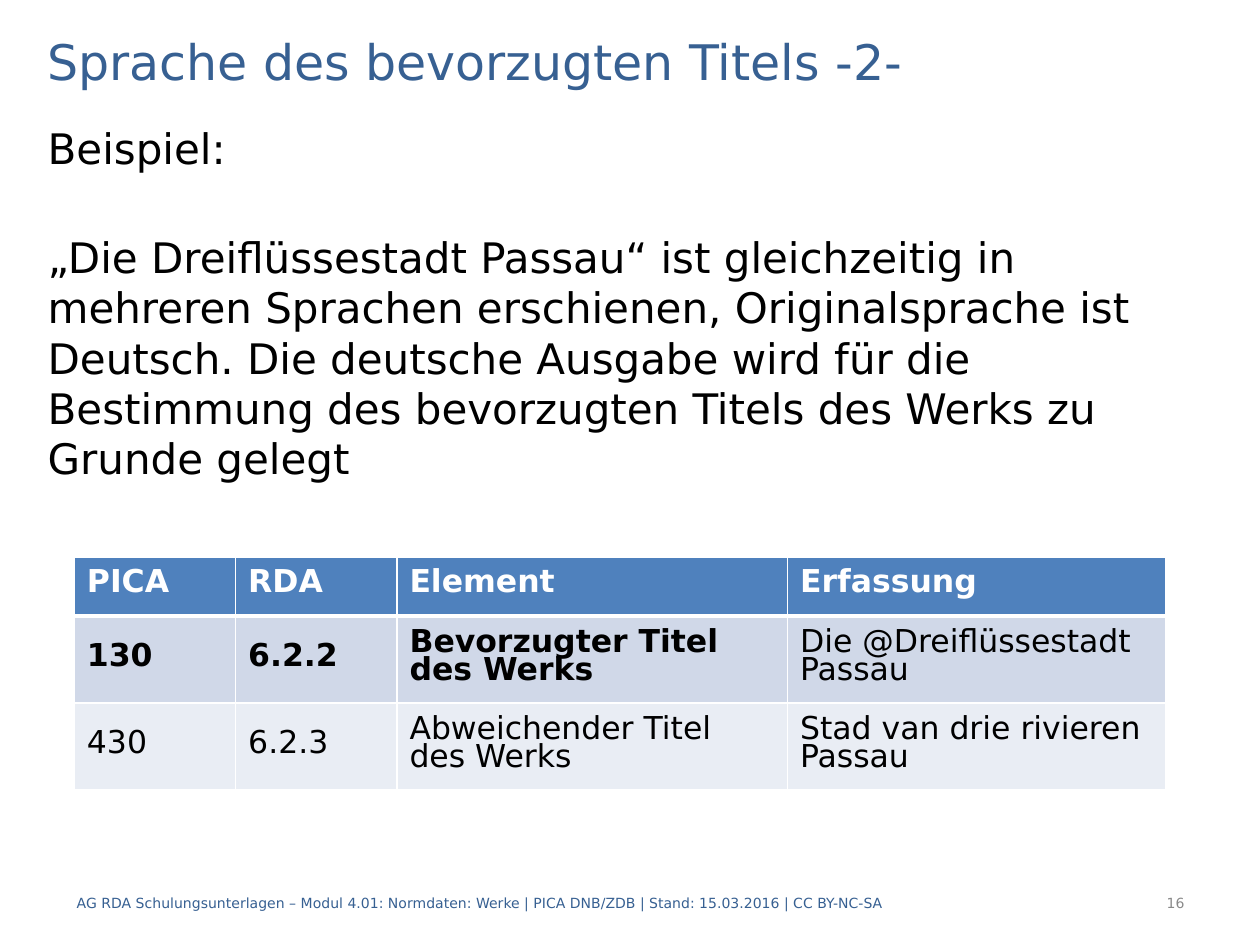
from lxml.etree import SubElement
from pptx import Presentation
from pptx.dml.color import RGBColor
from pptx.enum.text import MSO_ANCHOR, PP_ALIGN
from pptx.oxml.ns import qn
from pptx.util import Inches, Pt

FONT = "DejaVu Sans"
BLUE, GREY, BLACK, WHITE = "376092", "898989", "000000", "FFFFFF"
ROW_FILLS = ["4F81BD", "D0D8E8", "E9EDF4"]
COL_WIDTHS = [1.28, 1.28, 3.1, 3.0]
ROW_HEIGHTS = [0.47, 0.69, 0.69]
ROWS = [
    ["PICA", "RDA", "Element", "Erfassung"],
    ["130", "6.2.2", "Bevorzugter Titel des Werks", "Die @Dreiflüssestadt Passau"],
    ["430", "6.2.3", "Abweichender Titel des Werks", "Stad van drie rivieren Passau"],
]
BODY = [
    "Beispiel:",
    "„Die Dreiflüssestadt Passau“ ist gleichzeitig in mehreren Sprachen erschienen, "
    "Originalsprache ist Deutsch. Die deutsche Ausgabe wird für die Bestimmung des "
    "bevorzugten Titels des Werks zu Grunde gelegt",
]
FOOTER = ("AG RDA Schulungsunterlagen – Modul 4.01: Normdaten: Werke | PICA DNB/ZDB | "
          "Stand: 15.03.2016 | CC BY-NC-SA")


def rgb(value):
    return RGBColor.from_string(value)


def set_font(p, size, color, bold=False):
    p.font.name = FONT
    p.font.size = Pt(size)
    p.font.bold = bold
    p.font.color.rgb = rgb(color)


def add_text(s, box, paragraphs, size, color, anchor=MSO_ANCHOR.MIDDLE,
             align=PP_ALIGN.LEFT, gap=0, line=None):
    """Add a text box; gap is the space in points between its paragraphs."""
    tf = s.shapes.add_textbox(*map(Inches, box)).text_frame
    tf.word_wrap = True
    tf.vertical_anchor = anchor
    for i, text in enumerate(paragraphs):
        p = tf.paragraphs[0] if i == 0 else tf.add_paragraph()
        p.text = text
        p.alignment = align
        p.space_before = Pt(gap if i else 0)
        if line:
            p.line_spacing = Pt(line)
        set_font(p, size, color)


def set_borders(cell, is_header):
    tc_pr = cell._tc.get_or_add_tcPr()
    for i, side in enumerate(("lnL", "lnR", "lnT", "lnB")):
        width = Pt(3 if is_header and side == "lnB" else 1)
        ln = SubElement(tc_pr, qn(f"a:{side}"), w=str(width))
        fill = SubElement(ln, qn("a:solidFill"))
        SubElement(fill, qn("a:srgbClr"), val=WHITE)
        tc_pr.insert(i, ln)


def fill_cell(cell, text, row, bold):
    is_header = row == 0
    cell.fill.solid()
    cell.fill.fore_color.rgb = rgb(ROW_FILLS[row])
    set_borders(cell, is_header)
    p = cell.text_frame.paragraphs[0]
    p.text = text
    set_font(p, 18, WHITE if is_header else BLACK, bold)
    if not is_header:
        cell.vertical_anchor = MSO_ANCHOR.MIDDLE
        p.line_spacing = Pt(16)
        p.space_before = p.space_after = Pt(6)


def add_title_table(s, left, top):
    table = s.shapes.add_table(
        len(ROWS), len(COL_WIDTHS), Inches(left), Inches(top),
        Inches(sum(COL_WIDTHS)), Inches(sum(ROW_HEIGHTS))).table
    for column, width in zip(table.columns, COL_WIDTHS):
        column.width = Inches(width)
    for r, (texts, height) in enumerate(zip(ROWS, ROW_HEIGHTS)):
        table.rows[r].height = Inches(height)
        for c, text in enumerate(texts):
            bold = r == 0 or (r == 1 and c < 3)
            fill_cell(table.cell(r, c), text, r, bold)


def main():
    prs = Presentation()
    prs.slide_width, prs.slide_height = Inches(10), Inches(7.5)
    s = prs.slides.add_slide(prs.slide_layouts[6])
    add_text(s, (0.28, 0.2, 9.45, 0.56), ["Sprache des bevorzugten Titels -2-"], 28, BLUE)
    add_text(s, (0.28, 0.92, 9.45, 5.98), BODY, 24, BLACK,
             anchor=MSO_ANCHOR.TOP, gap=33.6, line=28.8)
    add_text(s, (0.51, 6.97, 8.19, 0.4), [FOOTER], 8, BLUE)
    add_text(s, (7.91, 6.97, 1.59, 0.4), ["16"], 8, GREY, align=PP_ALIGN.RIGHT)
    add_title_table(s, 0.59, 4.42)
    prs.save("out.pptx")


if __name__ == "__main__":
    main()
